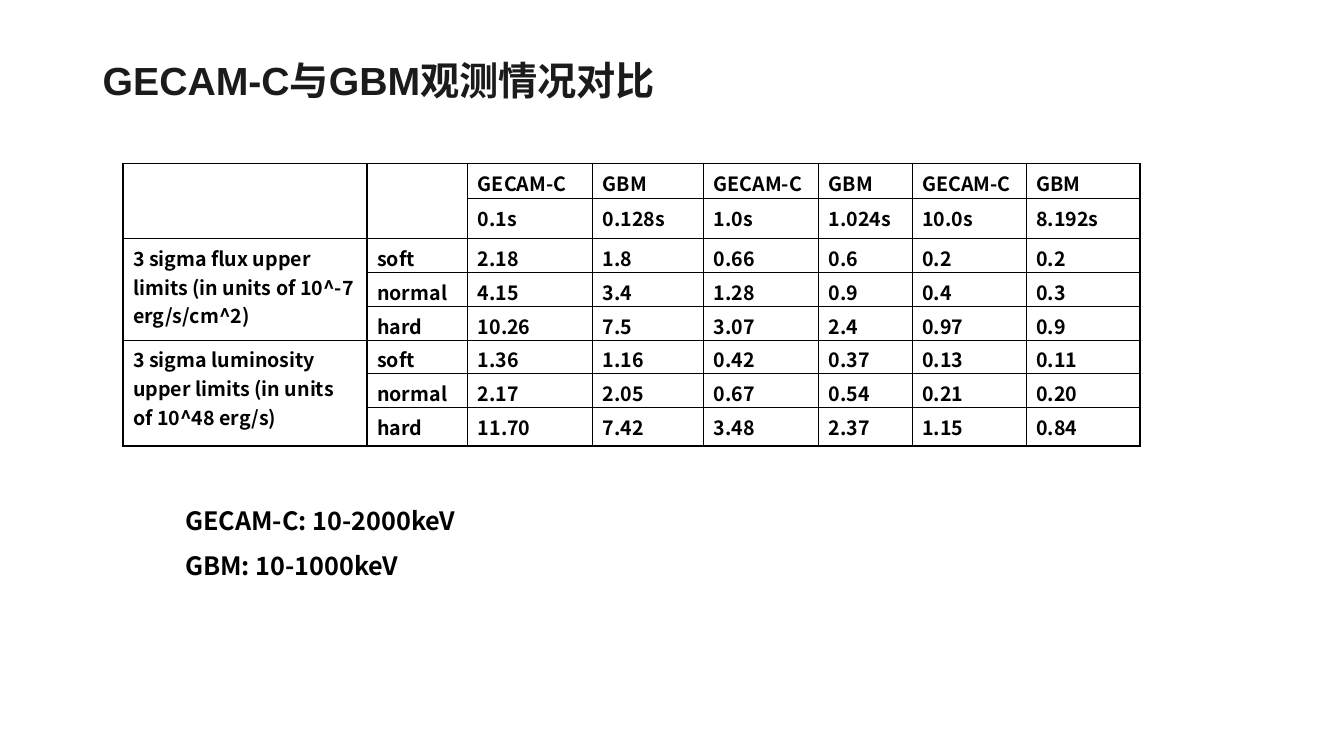
from lxml import etree
from pptx import Presentation
from pptx.dml.color import RGBColor
from pptx.enum.text import MSO_AUTO_SIZE
from pptx.oxml.ns import qn
from pptx.util import Cm, Pt

GROW = MSO_AUTO_SIZE.SHAPE_TO_FIT_TEXT
COLORS = {"title": "1B1B1B", "text": "000000", "border": "000000", "cell": "FFFFFF"}
BODY_FONT = "Noto Sans CJK SC"

COLUMN_WIDTHS = [6.15, 2.54, 3.15, 2.79, 2.9, 2.36, 2.87, 2.87]
ROW_HEIGHTS = [0.89, 1.02, 0.85, 0.85, 0.85, 0.85, 0.85, 0.97]
FLUX = "3 sigma flux upper limits (in units of 10^-7 erg/s/cm^2)"
LUMINOSITY = "3 sigma luminosity upper limits (in units of 10^48 erg/s)"
ROWS = [
    ["", "", "GECAM-C", "GBM", "GECAM-C", "GBM", "GECAM-C", "GBM"],
    ["", "", "0.1s", "0.128s", "1.0s", "1.024s", "10.0s", "8.192s"],
    [FLUX, "soft", "2.18", "1.8", "0.66", "0.6", "0.2", "0.2"],
    ["", "normal", "4.15", "3.4", "1.28", "0.9", "0.4", "0.3"],
    ["", "hard", "10.26", "7.5", "3.07", "2.4", "0.97", "0.9"],
    [LUMINOSITY, "soft", "1.36", "1.16", "0.42", "0.37", "0.13", "0.11"],
    ["", "normal", "2.17", "2.05", "0.67", "0.54", "0.21", "0.20"],
    ["", "hard", "11.70", "7.42", "3.48", "2.37", "1.15", "0.84"],
]
# (first row, last row, column)
MERGES = [(0, 1, 0), (0, 1, 1), (2, 4, 0), (5, 7, 0)]


def write_text(frame, text, size, font=BODY_FONT, color="text", spacing=None):
    """Fill a text frame with bold text, one paragraph per line."""
    frame.word_wrap = True
    frame.text = text
    for paragraph in frame.paragraphs:
        paragraph.line_spacing = spacing
        for run in paragraph.runs:
            run.font.size = Pt(size)
            run.font.bold = True
            run.font.name = font
            run.font.color.rgb = RGBColor.from_string(COLORS[color])
            east_asian = etree.SubElement(run.font._element, qn("a:ea"))
            east_asian.set("typeface", BODY_FONT)


def add_borders(cell):
    properties = cell._tc.get_or_add_tcPr()
    for index, side in enumerate(("lnL", "lnR", "lnT", "lnB")):
        line = etree.Element(qn(f"a:{side}"), w=str(Pt(1)))
        fill = etree.SubElement(line, qn("a:solidFill"))
        etree.SubElement(fill, qn("a:srgbClr"), val=COLORS["border"])
        properties.insert(index, line)


presentation = Presentation()
presentation.slide_width = Cm(33.87)
presentation.slide_height = Cm(19.05)
slide = presentation.slides.add_slide(presentation.slide_layouts[6])

title = slide.shapes.add_textbox(Cm(2.34), Cm(1.3), Cm(16.94), Cm(2.24))
write_text(title.text_frame, "GECAM-C与GBM观测情况对比", 28, font="Arial", color="title")
title.text_frame.auto_size = GROW

table = slide.shapes.add_table(
    len(ROWS), len(COLUMN_WIDTHS), Cm(3.1), Cm(4.11),
    Cm(sum(COLUMN_WIDTHS)), Cm(sum(ROW_HEIGHTS))).table
for column, width in zip(table.columns, COLUMN_WIDTHS):
    column.width = Cm(width)
for row, height, values in zip(table.rows, ROW_HEIGHTS, ROWS):
    row.height = Cm(height)
    for cell, value in zip(row.cells, values):
        cell.margin_bottom = 0
        cell.fill.solid()
        cell.fill.fore_color.rgb = RGBColor.from_string(COLORS["cell"])
        add_borders(cell)
        if value:
            write_text(cell.text_frame, value, 14)
for first, last, column in MERGES:
    table.cell(first, column).merge(table.cell(last, column))

energy_ranges = slide.shapes.add_textbox(Cm(4.42), Cm(12.22), Cm(16.94), Cm(2.44))
write_text(energy_ranges.text_frame, "GECAM-C: 10-2000keV\nGBM: 10-1000keV", 18, spacing=1.5)
energy_ranges.text_frame.auto_size = GROW

presentation.save("out.pptx")
